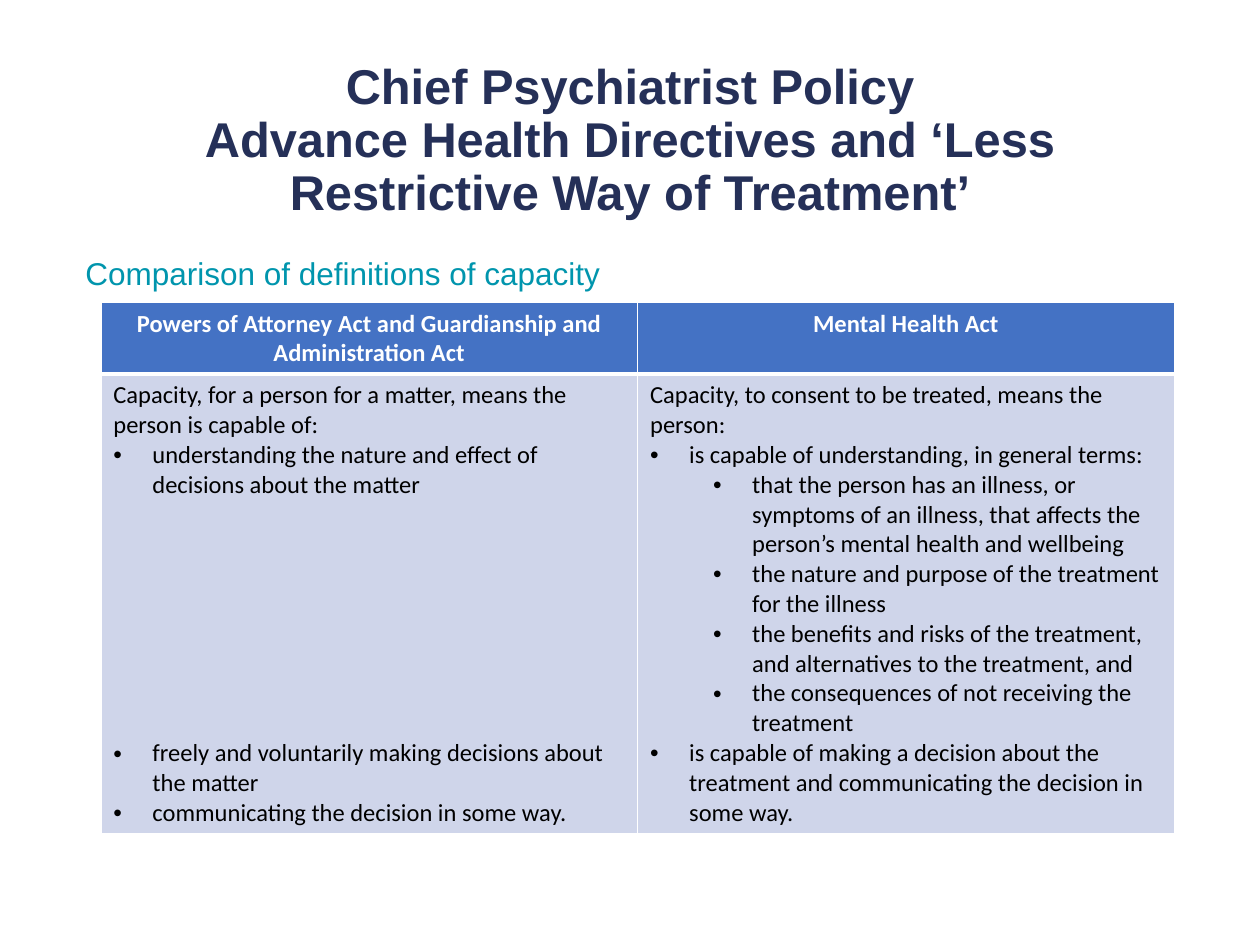
import dataclasses

import pptx
import pptx.dml.color
import pptx.enum.text
import pptx.oxml.ns
import pptx.util
from lxml import etree
from pptx.util import Inches


@dataclasses.dataclass(frozen=True)
class Theme:
    navy: str = "253058"
    teal: str = "0095AD"
    header_fill: str = "4472C4"
    body_fill: str = "CFD5EA"
    white: str = "FFFFFF"
    black: str = "000000"
    title_size: float = 27.9
    subtitle_size: int = 18
    table_size: int = 14
    heading_font: str = "Arial"
    table_font: str = "Calibri"


theme = Theme()
CENTER = pptx.enum.text.PP_ALIGN.CENTER
LEFT = pptx.enum.text.PP_ALIGN.LEFT


def write(frame, text, *, font, size, color, bold=False, align=LEFT,
          line_spacing=None, bullet_level=None, space_before=None):
    """Write one paragraph, reusing the frame's first one while it is empty."""
    paragraph = frame.paragraphs[0] if not frame.text else frame.add_paragraph()
    paragraph.alignment = align
    if line_spacing:
        paragraph.line_spacing = line_spacing
    if space_before:
        paragraph.space_before = pptx.util.Pt(space_before)
    if bullet_level is not None:
        paragraph.level = bullet_level
        properties = paragraph._p.get_or_add_pPr()
        properties.set("marL", str(Inches(0.31 + 0.5 * bullet_level)))
        properties.set("indent", str(Inches(-0.31)))
        etree.SubElement(properties, pptx.oxml.ns.qn("a:buFont"), typeface="Arial")
        etree.SubElement(properties, pptx.oxml.ns.qn("a:buChar"), char="•")
    paragraph.text = text
    for run in paragraph.runs:
        run.font.name = font
        run.font.size = pptx.util.Pt(size)
        run.font.bold = bold
        run.font.color.rgb = pptx.dml.color.RGBColor.from_string(color)


def style_cell(cell, fill, top, bottom):
    """Give a cell white borders (widths in points) and a solid fill."""
    properties = cell._tc.get_or_add_tcPr()
    for side, width in (("L", 1), ("R", 1), ("T", top), ("B", bottom)):
        line = etree.SubElement(properties, pptx.oxml.ns.qn(f"a:ln{side}"),
                                w=str(pptx.util.Pt(width)))
        solid = etree.SubElement(line, pptx.oxml.ns.qn("a:solidFill"))
        etree.SubElement(solid, pptx.oxml.ns.qn("a:srgbClr"), val=theme.white)
    cell.fill.solid()
    cell.fill.fore_color.rgb = pptx.dml.color.RGBColor.from_string(fill)


presentation = pptx.Presentation()
presentation.slide_width = Inches(10)
presentation.slide_height = Inches(7.5)
slide = presentation.slides.add_slide(presentation.slide_layouts[6])

# Title
title = slide.shapes.add_textbox(Inches(0.69), Inches(0.4), Inches(8.62), Inches(1.45))
title.text_frame.word_wrap = True
title.text_frame.vertical_anchor = pptx.enum.text.MSO_ANCHOR.MIDDLE
write(title.text_frame,
      "Chief Psychiatrist Policy\v"
      "Advance Health Directives and ‘Less Restrictive Way of Treatment’",
      font=theme.heading_font, size=theme.title_size, color=theme.navy,
      bold=True, align=CENTER, line_spacing=0.9)

# Subtitle
subtitle = slide.shapes.add_textbox(Inches(0.58), Inches(2), Inches(8.62), Inches(4.76))
subtitle.text_frame.word_wrap = True
write(subtitle.text_frame, "Comparison of definitions of capacity",
      font=theme.heading_font, size=theme.subtitle_size, color=theme.teal,
      line_spacing=0.9)

# Comparison: heading, then (text, bullet level, space before in points).
# The wide space lines up the matching points of the two acts.
definitions = [
    ("Powers of Attorney Act and Guardianship and Administration Act", [
        ("Capacity, for a person for a matter, means the person is capable of:", None, None),
        ("understanding the nature and effect of decisions about the matter", 0, None),
        ("freely and voluntarily making decisions about the matter", 0, 136.5),
        ("communicating the decision in some way.", 0, None),
    ]),
    ("Mental Health Act", [
        ("Capacity, to consent to be treated, means the person:", None, None),
        ("is capable of understanding, in general terms:", 0, None),
        ("that the person has an illness, or symptoms of an illness, that affects "
         "the person’s mental health and wellbeing", 1, None),
        ("the nature and purpose of the treatment for the illness", 1, None),
        ("the benefits and risks of the treatment, and alternatives to the treatment, and",
         1, None),
        ("the consequences of not receiving the treatment", 1, None),
        ("is capable of making a decision about the treatment and communicating "
         "the decision in some way.", 0, None),
    ]),
]

# Table
table = slide.shapes.add_table(2, len(definitions), Inches(0.8), Inches(2.4),
                               Inches(8.52), Inches(4.22)).table
table.horz_banding = False
table.rows[0].height = Inches(0.57)
table.rows[1].height = Inches(3.65)

for column, (heading, points) in enumerate(definitions):
    table.columns[column].width = Inches(4.26)
    header, body = table.cell(0, column), table.cell(1, column)
    style_cell(header, theme.header_fill, top=1, bottom=3)
    style_cell(body, theme.body_fill, top=3, bottom=1)
    write(header.text_frame, heading, font=theme.table_font, size=theme.table_size,
          color=theme.white, bold=True, align=CENTER)
    for text, level, space in points:
        write(body.text_frame, text, font=theme.table_font, size=theme.table_size,
              color=theme.black, bullet_level=level, space_before=space)

presentation.save("out.pptx")
